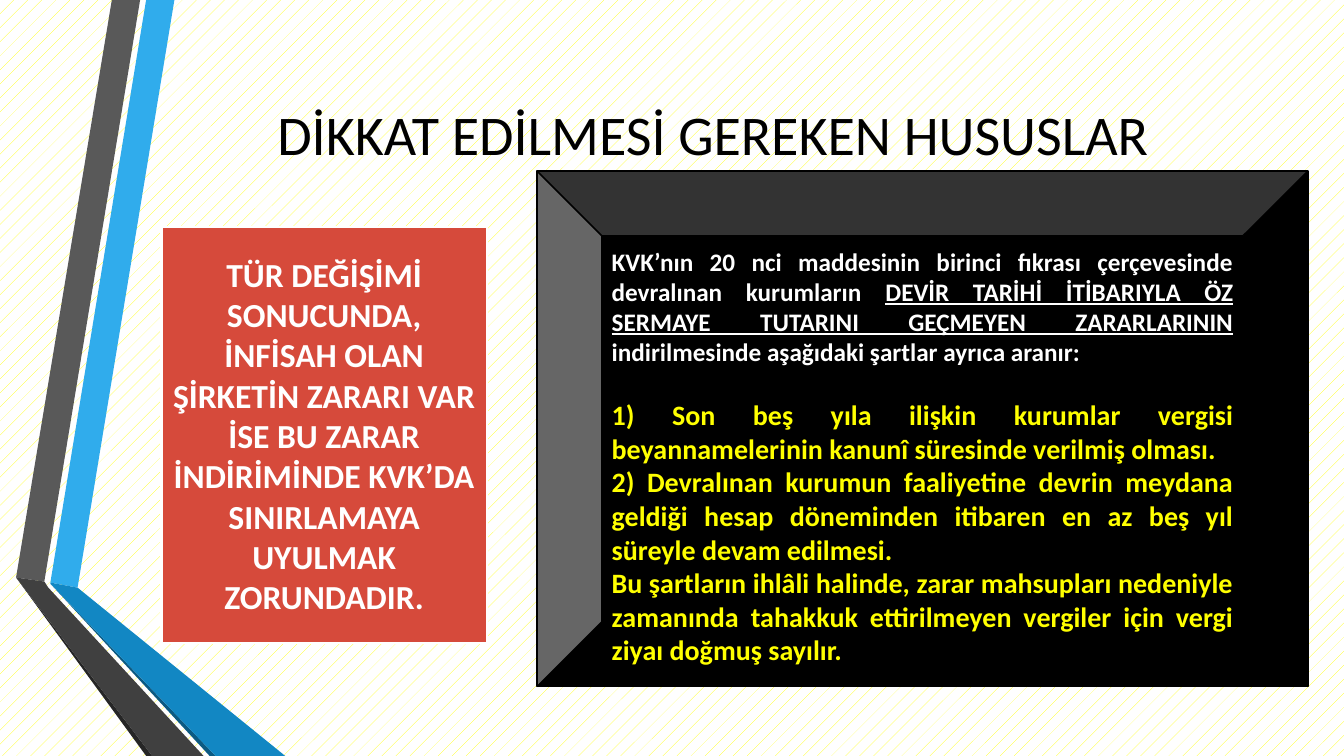
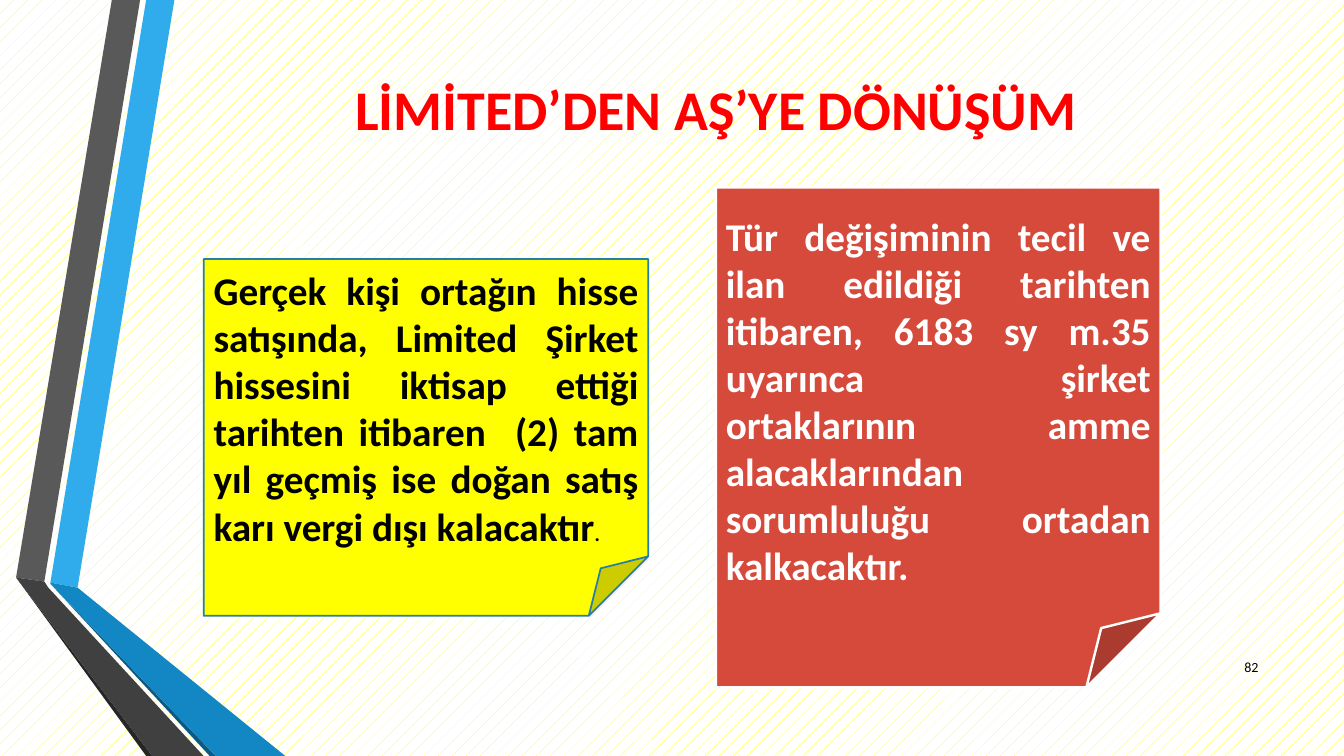
import dataclasses
import typing

import pptx
import pptx.dml.color
import pptx.enum.dml
import pptx.enum.shapes
import pptx.enum.text
import pptx.presentation
import pptx.shapes.autoshape
import pptx.slide
import pptx.text.text
import pptx.util

SCALE = 9144
Align = pptx.enum.text.PP_ALIGN
Anchor = pptx.enum.text.MSO_ANCHOR
Kind = pptx.enum.shapes.MSO_SHAPE


@dataclasses.dataclass(frozen=True)
class Theme:
    font: str = "Calibri"
    black: str = "000000"
    white: str = "FFFFFF"
    yellow: str = "FFFF00"
    red: str = "FF0000"
    brick: str = "D64A3B"
    edge: str = "247FAF"
    sky: str = "30ACEC"
    blue: str = "1287C3"
    navy: str = "0C5A82"
    grey: str = "595959"
    slate: str = "404040"
    coal: str = "262626"
    title: int = 40
    note: int = 28
    claim: int = 24
    rule: int = 20
    body: int = 18
    page: int = 10
    thin: float = 1.25
    thick: float = 1.75


THEME = Theme()


class Box(typing.NamedTuple):
    left: int
    top: int
    width: int
    height: int


class Band(typing.NamedTuple):
    color: str
    points: tuple[tuple[int, int], ...]


class Panel(typing.NamedTuple):
    kind: Kind
    box: Box
    fill: str
    line: str
    weight: float


BANDS = (
    Band(THEME.sky, ((50, 578), (77, 583), (173, 0), (145, 0))),
    Band(THEME.grey, ((139, 0), (111, 0), (16, 573), (44, 577))),
    Band(THEME.coal, ((16, 573), (145, 750), (151, 750))),
    Band(THEME.navy, ((50, 579), (208, 750), (214, 750))),
    Band(THEME.blue, ((50, 579), (214, 750), (283, 750), (77, 583), (50, 578))),
    Band(THEME.slate, ((202, 750), (48, 583), (44, 577), (16, 573), (151, 750))),
)

CLAIM = Panel(Kind.FLOWCHART_PROCESS, Box(160, 225, 323, 413),
              THEME.brick, THEME.white, THEME.thick)
RULES = Panel(Kind.BEVEL, Box(533, 170, 764, 511),
              THEME.black, THEME.black, THEME.thin)
SALE = Panel(Kind.FOLDED_CORNER, Box(202, 257, 441, 354),
             THEME.yellow, THEME.edge, THEME.thin)
DEBT = Panel(Kind.FOLDED_CORNER, Box(710, 186, 441, 496),
             THEME.brick, THEME.white, THEME.thick)


def px(count: int) -> pptx.util.Emu:
    return pptx.util.Emu(count * SCALE)


def rgb(color: str) -> pptx.dml.color.RGBColor:
    return pptx.dml.color.RGBColor.from_string(color)


def write(
    frame: pptx.text.text.TextFrame,
    text: str,
    *,
    size: int,
    color: str,
    bold: bool = False,
    under: bool = False,
    align: Align = Align.JUSTIFY,
    before: int = 0,
    join: bool = False,
) -> None:
    if join or not frame.text:
        para = frame.paragraphs[-1]
    else:
        para = frame.add_paragraph()
    if not join:
        para.alignment = align
        para.space_before = pptx.util.Pt(before)
    run = para.add_run()
    run.text = text
    run.font.name = THEME.font
    run.font.size = pptx.util.Pt(size)
    run.font.bold = bold
    run.font.underline = under
    run.font.color.rgb = rgb(color)


def setup(frame: pptx.text.text.TextFrame, anchor: Anchor = Anchor.MIDDLE) -> None:
    frame.word_wrap = True
    frame.auto_size = pptx.enum.text.MSO_AUTO_SIZE.NONE
    frame.vertical_anchor = anchor


def draw_band(slide: pptx.slide.Slide, band: Band) -> None:
    pen = slide.shapes.build_freeform(*band.points[0], scale=SCALE)
    pen.add_line_segments(band.points[1:], close=True)
    shape = pen.convert_to_shape()
    shape.shadow.inherit = False
    shape.fill.solid()
    shape.fill.fore_color.rgb = rgb(band.color)
    shape.line.fill.background()


def draw_panel(
    slide: pptx.slide.Slide, panel: Panel, anchor: Anchor = Anchor.MIDDLE
) -> pptx.text.text.TextFrame:
    shape = slide.shapes.add_shape(panel.kind, *map(px, panel.box))
    shape.shadow.inherit = False
    shape.fill.solid()
    shape.fill.fore_color.rgb = rgb(panel.fill)
    shape.line.color.rgb = rgb(panel.line)
    shape.line.width = pptx.util.Pt(panel.weight)
    setup(shape.text_frame, anchor)
    return shape.text_frame


def start(
    deck: pptx.presentation.Presentation, text: str, box: Box, color: str, bold: bool
) -> pptx.slide.Slide:
    slide = deck.slides.add_slide(deck.slide_layouts[5])
    for band in BANDS:
        draw_band(slide, band)
    title = slide.shapes.title
    title.left, title.top, title.width, title.height = map(px, box)
    setup(title.text_frame)
    write(title.text_frame, text, size=THEME.title, color=color, bold=bold,
          align=Align.CENTER)
    return slide


def build_losses(deck: pptx.presentation.Presentation) -> None:
    slide = start(deck, "DİKKAT EDİLMESİ GEREKEN HUSUSLAR",
                  Box(159, 36, 1096, 192), THEME.black, False)
    write(
        draw_panel(slide, CLAIM),
        "TÜR DEĞİŞİMİ SONUCUNDA, İNFİSAH OLAN ŞİRKETİN ZARARI VAR İSE BU ZARAR "
        "İNDİRİMİNDE KVK’DA SINIRLAMAYA UYULMAK ZORUNDADIR.",
        size=THEME.claim, color=THEME.white, bold=True, align=Align.CENTER,
    )
    frame = draw_panel(slide, RULES, Anchor.TOP)
    frame.margin_top = px(10)
    intro = (
        ("KVK’nın 20 nci maddesinin birinci fıkrası çerçevesinde devralınan "
         "kurumların ", False),
        ("DEVİR TARİHİ İTİBARIYLA ÖZ SERMAYE TUTARINI GEÇMEYEN ZARARLARININ", True),
        (" indirilmesinde aşağıdaki şartlar ayrıca aranır:", False),
    )
    for spot, (text, under) in enumerate(intro):
        write(frame, text, size=THEME.body, color=THEME.white, bold=True,
              under=under, join=spot > 0)
    terms = (
        "1) Son beş yıla ilişkin kurumlar vergisi beyannamelerinin kanunî "
        "süresinde verilmiş olması.",
        "2) Devralınan kurumun faaliyetine devrin meydana geldiği hesap "
        "döneminden itibaren en az beş yıl süreyle devam edilmesi.",
        "Bu şartların ihlâli halinde, zarar mahsupları nedeniyle zamanında "
        "tahakkuk ettirilmeyen vergiler için vergi ziyaı doğmuş sayılır.",
    )
    for spot, text in enumerate(terms):
        write(frame, text, size=THEME.rule, color=THEME.yellow, bold=True,
              before=0 if spot else 22)


def build_switch(deck: pptx.presentation.Presentation) -> None:
    slide = start(deck, "LİMİTED’DEN AŞ’YE DÖNÜŞÜM",
                  Box(162, 44, 1096, 126), THEME.red, True)
    page = slide.shapes.add_textbox(*map(px, Box(1198, 642, 60, 40))).text_frame
    setup(page)
    write(page, "82", size=THEME.page, color=THEME.black, align=Align.RIGHT)
    sale = draw_panel(slide, SALE)
    write(
        sale,
        "Gerçek kişi ortağın hisse satışında, Limited Şirket hissesini iktisap "
        "ettiği tarihten itibaren  (2) tam yıl geçmiş ise doğan satış karı vergi "
        "dışı kalacaktır",
        size=THEME.note, color=THEME.black, bold=True,
    )
    write(sale, ".", size=THEME.body, color=THEME.black, join=True)
    write(
        draw_panel(slide, DEBT),
        "Tür değişiminin tecil ve ilan edildiği tarihten itibaren, 6183 sy m.35 "
        "uyarınca şirket ortaklarının amme alacaklarından sorumluluğu ortadan "
        "kalkacaktır.",
        size=THEME.note, color=THEME.white, bold=True,
    )


def main() -> None:
    deck = pptx.Presentation()
    deck.slide_width, deck.slide_height = px(1333), px(750)
    back = deck.slide_master.background.fill
    back.patterned()
    back.pattern = pptx.enum.dml.MSO_PATTERN.PERCENT_5
    back.fore_color.rgb = rgb(THEME.yellow)
    back.back_color.rgb = rgb(THEME.white)
    build_losses(deck)
    build_switch(deck)
    deck.save("out.pptx")


if __name__ == "__main__":
    main()
